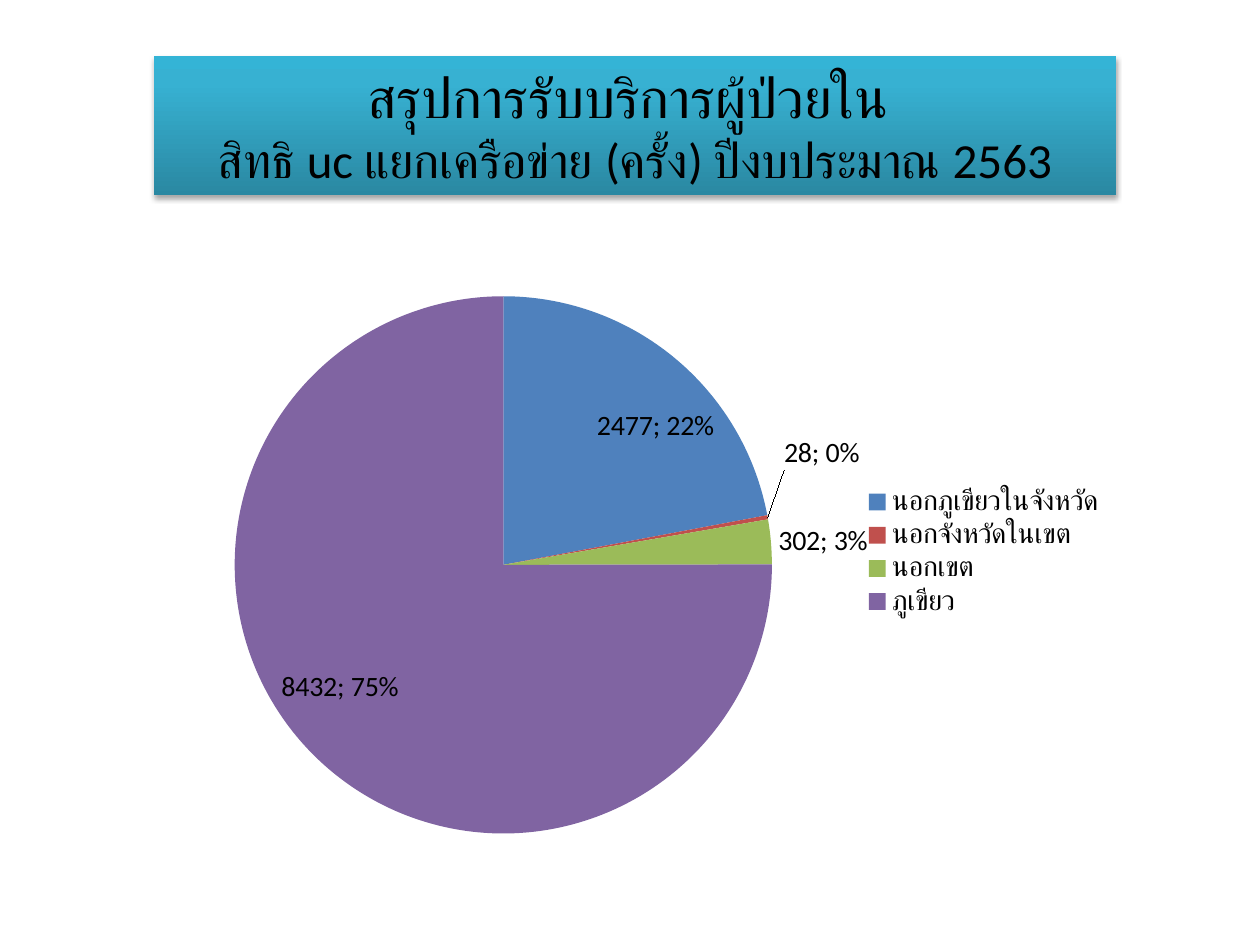
"""Build a slide with a title banner and a pie chart of inpatient visits."""
from pptx import Presentation, oxml
from pptx.chart.data import CategoryChartData
from pptx.dml.color import RGBColor
from pptx.enum import chart as ch, shapes, text
from pptx.oxml import ns
from pptx.util import Cm, Pt

FONT = "Calibri"
BLACK = "000000"
TITLE = [("สรุปการรับบริการผู้ป่วยใน ", 32),
         ("สิทธิ uc แยกเครือข่าย (ครั้ง) ปีงบประมาณ 2563", 28)]
SLICES = [("นอกภูเขียวในจังหวัด", 2477, "4F81BD"),
          ("นอกจังหวัดในเขต", 28, "C0504D"),
          ("นอกเขต", 302, "9BBB59"),
          ("ภูเขียว", 8432, "8064A2")]
STOPS = [(0, "2A88A2"), (80, "37B1D2"), (100, "34B4D6")]
BANNER = (3.1, 1.12, 19.4, 2.82)
CHART = (4.32, 4.52, 18.21, 13.21)
PLOT = {"x": 0.02, "y": 0.11, "w": 0.6, "h": 0.82}
MOVED = {1: (0.01, -0.07)}


def paint(item, color):
    item.rgb = RGBColor.from_string(color)


def style(font, size):
    font.name, font.size = FONT, Pt(size)
    paint(font.color, BLACK)


def node(tag, body, *names):
    return oxml.parse_xml(f"<{tag} {ns.nsdecls(*names)}>{body}</{tag}>")


def add_title(slide):
    box = slide.shapes.add_shape(shapes.MSO_SHAPE.RECTANGLE, *map(Cm, BANNER))
    box.line.fill.background()
    stops = "".join(f'<a:gs pos="{pos * 1000}"><a:srgbClr val="{color}"/></a:gs>'
                    for pos, color in STOPS)
    grad = node("a:gradFill", f'<a:gsLst>{stops}</a:gsLst><a:lin ang="16200000" scaled="0"/>', "a")
    shade = node("a:effectLst",
                 '<a:outerShdw blurRad="40000" dist="23000" dir="5400000" rotWithShape="0">'
                 f'<a:srgbClr val="{BLACK}"><a:alpha val="35000"/></a:srgbClr></a:outerShdw>', "a")
    props = box._element.spPr
    props.find(ns.qn("a:prstGeom")).addnext(grad)
    props.append(shade)
    frame = box.text_frame
    frame.word_wrap = True
    frame.vertical_anchor = text.MSO_ANCHOR.MIDDLE
    for i, (line, size) in enumerate(TITLE):
        para = frame.add_paragraph() if i else frame.paragraphs[0]
        para.text = line
        para.alignment = text.PP_ALIGN.CENTER
        style(para.font, size)


def add_pie(slide):
    data = CategoryChartData()
    data.categories = [name for name, _, _ in SLICES]
    data.add_series("Series 1", [value for _, value, _ in SLICES])
    pie = slide.shapes.add_chart(ch.XL_CHART_TYPE.PIE, *map(Cm, CHART), data).chart
    style(pie.font, 16)
    pie.has_title = False
    pie.has_legend = True
    pie.legend.position = ch.XL_LEGEND_POSITION.RIGHT
    pie.legend.include_in_layout = False
    series = pie.plots[0].series[0]
    for i, (_, _, color) in enumerate(SLICES):
        fill = series.points[i].format.fill
        fill.solid()
        paint(fill.fore_color, color)
    add_labels(series)
    place = '<c:layoutTarget val="inner"/><c:xMode val="edge"/><c:yMode val="edge"/>'
    place += "".join(f'<c:{key} val="{val}"/>' for key, val in PLOT.items())
    area = pie._chartSpace.chart.plotArea
    for old in area.findall(ns.qn("c:layout")):
        area.remove(old)
    area.insert(0, node("c:layout", f"<c:manualLayout>{place}</c:manualLayout>", "c"))


def add_labels(series):
    flags = {"LegendKey": 0, "Val": 1, "CatName": 0, "SerName": 0, "Percent": 1, "BubbleSize": 0}
    show = '<c:dLblPos val="bestFit"/>'
    show += "".join(f'<c:show{key} val="{val}"/>' for key, val in flags.items())
    show += "<c:separator>; </c:separator>"
    moved = "".join(f'<c:dLbl><c:idx val="{i}"/><c:layout><c:manualLayout><c:x val="{x}"/>'
                    f'<c:y val="{y}"/></c:manualLayout></c:layout>{show}</c:dLbl>'
                    for i, (x, y) in MOVED.items())
    labels = node("c:dLbls", f'{moved}{show}<c:showLeaderLines val="1"/>', "c")
    series._element.find(ns.qn("c:cat")).addprevious(labels)


def main():
    deck = Presentation()
    deck.slide_width, deck.slide_height = Cm(25.4), Cm(19.05)
    slide = deck.slides.add_slide(deck.slide_layouts[6])
    add_pie(slide)
    add_title(slide)
    deck.save("out.pptx")


if __name__ == "__main__":
    main()
